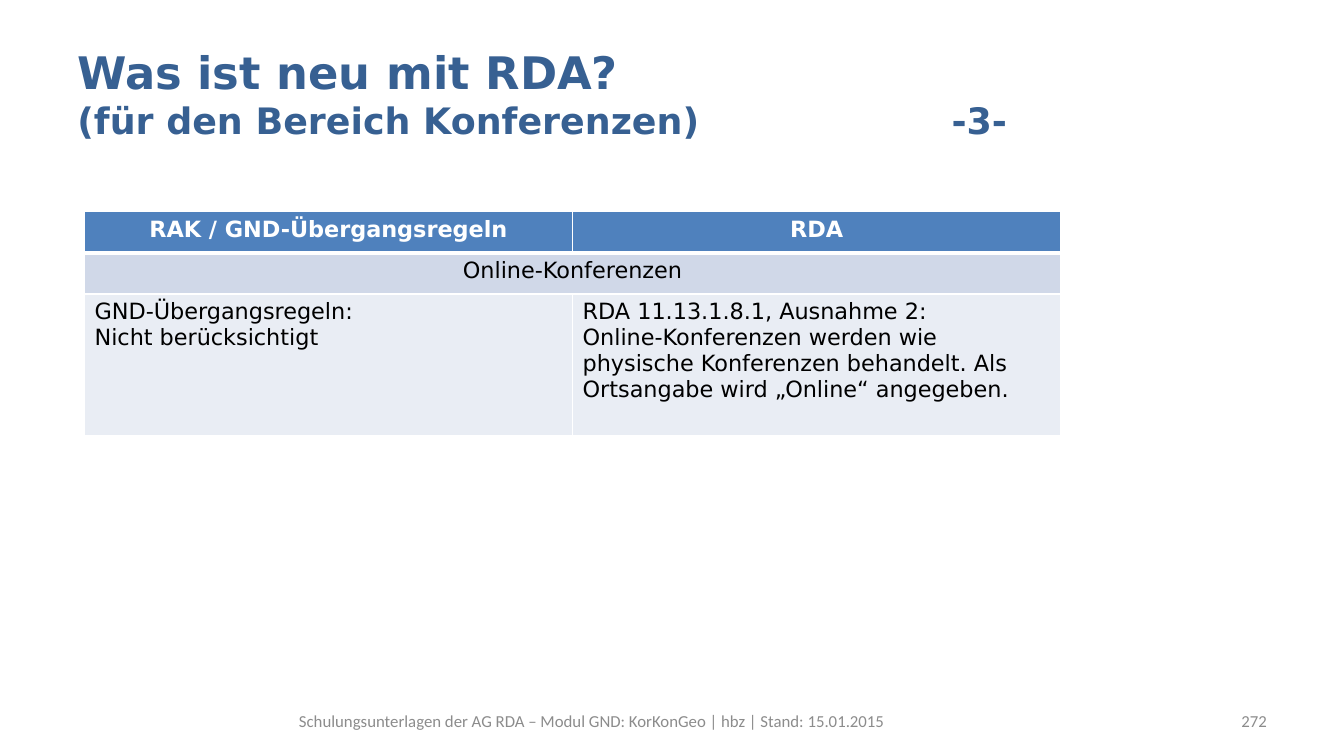
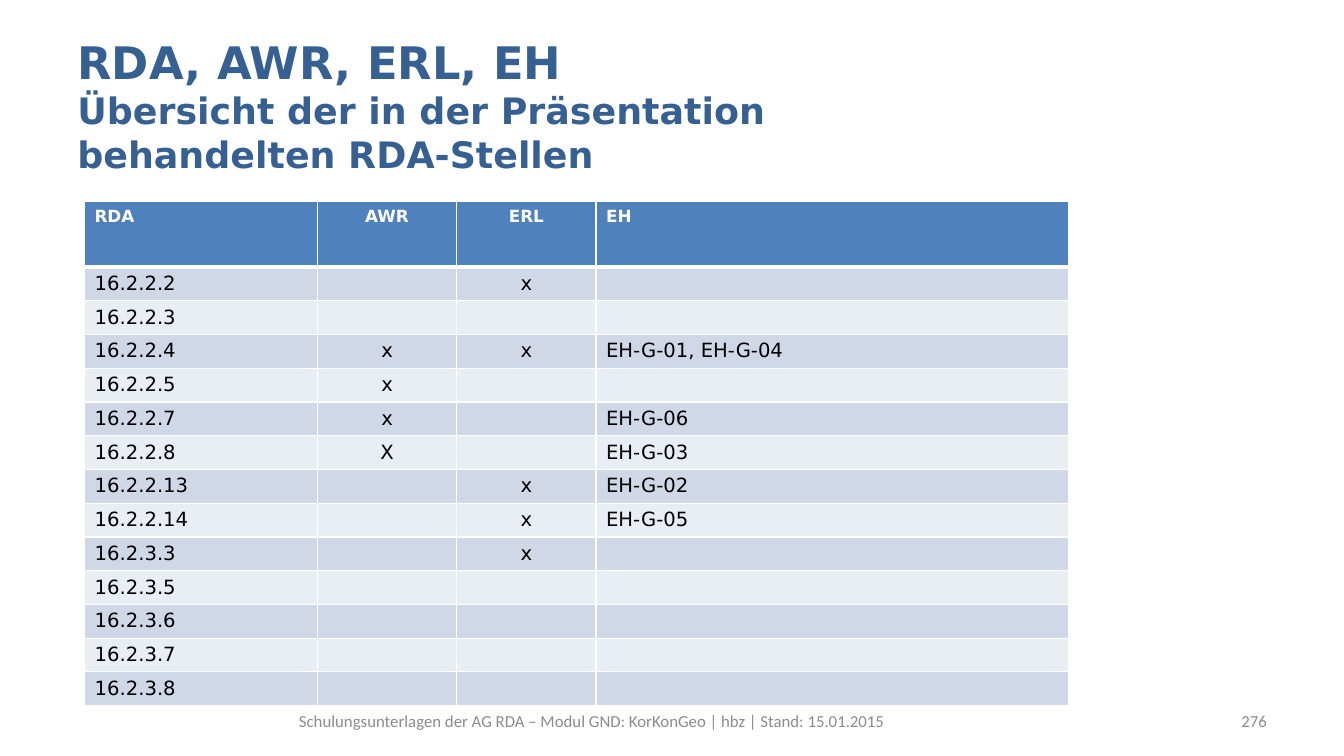
import lxml.etree
import pptx
import pptx.dml.color
import pptx.enum.text
import pptx.oxml.ns
import pptx.util
from dataclasses import dataclass

Cm = pptx.util.Cm
Pt = pptx.util.Pt
qn = pptx.oxml.ns.qn
ALIGN = pptx.enum.text.PP_ALIGN
LEFT, CENTER, RIGHT = ALIGN.LEFT, ALIGN.CENTER, ALIGN.RIGHT


@dataclass(frozen=True)
class Theme:
    heading_font: str = "DejaVu Sans"
    footer_font: str = "Calibri"
    title_color: str = "376092"
    footer_color: str = "8C8C8C"
    header_fill: str = "4F81BD"
    band_fills: tuple = ("D0D8E8", "E9EDF4")
    white: str = "FFFFFF"
    black: str = "000000"
    title_size: int = 32
    subtitle_size: int = 26
    footer_size: int = 12
    thin_line: int = 1
    thick_line: int = 3


THEME = Theme()
FOOTER = "Schulungsunterlagen der AG RDA – Modul GND: KorKonGeo | hbz | Stand: 15.01.2015"
TABLE_LEFT = 2.13

PAGES = [
    {
        "title": "Was ist neu mit RDA?\n(für den Bereich Konferenzen)\t-3-",
        "title_height": 3.18,
        "number": "272",
        "table_top": 5.33,
        "columns": [12.3, 12.3],
        "row_heights": [1.04, 1.04, 3.56],
        "header_size": 16,
        "body_size": 16,
        "header_aligns": [CENTER, CENTER],
        "body_aligns": [LEFT, LEFT],
        "rows": [
            ["RAK / GND-Übergangsregeln", "RDA"],
            ["Online-Konferenzen"],
            [
                "GND-Übergangsregeln:\nNicht berücksichtigt",
                "RDA 11.13.1.8.1, Ausnahme 2:\nOnline-Konferenzen werden wie physische "
                "Konferenzen behandelt. Als Ortsangabe wird „Online“ angegeben.",
            ],
        ],
    },
    {
        "title": "RDA, AWR, ERL, EH\nÜbersicht der in der Präsentation behandelten RDA-Stellen",
        "title_height": 3.76,
        "number": "276",
        "table_top": 5.08,
        "columns": [5.87, 3.51, 3.51, 11.91],
        "row_heights": [1.65] + [0.85] * 13,
        "header_size": 12,
        "body_size": 14,
        "header_aligns": [LEFT, CENTER, CENTER, LEFT],
        "body_aligns": [LEFT, CENTER, CENTER, LEFT],
        "rows": [
            ["RDA", "AWR", "ERL", "EH"],
            ["16.2.2.2", "", "x", ""],
            ["16.2.2.3", "", "", ""],
            ["16.2.2.4", "x", "x", "EH-G-01, EH-G-04"],
            ["16.2.2.5", "x", "", ""],
            ["16.2.2.7", "x", "", "EH-G-06"],
            ["16.2.2.8", "X", "", "EH-G-03"],
            ["16.2.2.13", "", "x", "EH-G-02"],
            ["16.2.2.14", "", "x", "EH-G-05"],
            ["16.2.3.3", "", "x", ""],
            ["16.2.3.5", "", "", ""],
            ["16.2.3.6", "", "", ""],
            ["16.2.3.7", "", "", ""],
            ["16.2.3.8", "", "", ""],
        ],
    },
]


def write(frame, text, *, size, color, font=THEME.heading_font, bold=False,
          align=LEFT, first_size=None, tab=None):
    """Fill a text frame, one paragraph per line; first_size sets the first line apart."""
    for index, line in enumerate(text.split("\n")):
        paragraph = frame.add_paragraph() if index else frame.paragraphs[0]
        paragraph.alignment = align
        line_size = first_size if first_size and index == 0 else size
        if "\t" in line:
            stops = lxml.etree.SubElement(paragraph._p.get_or_add_pPr(), qn("a:tabLst"))
            lxml.etree.SubElement(stops, qn("a:tab"), pos=str(tab), algn="l")
        if not line:
            # An empty cell would otherwise take the default size and stretch its row
            lxml.etree.SubElement(paragraph._p, qn("a:endParaRPr"), sz=str(line_size * 100))
            continue
        run = paragraph.add_run()
        run.text = line
        run.font.size = Pt(line_size)
        run.font.name = font
        run.font.bold = bold
        run.font.color.rgb = pptx.dml.color.RGBColor.from_string(color)


def add_text_box(slide, left, top, width, height, text, **text_format):
    frame = slide.shapes.add_textbox(Cm(left), Cm(top), Cm(width), Cm(height)).text_frame
    frame.word_wrap = True
    frame.vertical_anchor = pptx.enum.text.MSO_ANCHOR.MIDDLE
    write(frame, text, **text_format)


presentation = pptx.Presentation()
presentation.slide_width = Cm(33.87)
presentation.slide_height = Cm(19.05)
footer_format = {"size": THEME.footer_size, "color": THEME.footer_color,
                 "font": THEME.footer_font}

for page in PAGES:
    slide = presentation.slides.add_slide(presentation.slide_layouts[6])
    add_text_box(slide, 1.7, 0.76, 24.23, page["title_height"], page["title"],
                 size=THEME.subtitle_size, first_size=THEME.title_size,
                 color=THEME.title_color, bold=True, tab=Cm(22.03))
    add_text_box(slide, 1.7, 17.65, 26.44, 1.02, FOOTER, align=CENTER, **footer_format)
    add_text_box(slide, 29.46, 17.65, 2.72, 1.02, page["number"], align=RIGHT, **footer_format)

    columns, heights = page["columns"], page["row_heights"]
    table = slide.shapes.add_table(
        len(heights), len(columns), Cm(TABLE_LEFT), Cm(page["table_top"]),
        Cm(sum(columns)), Cm(sum(heights))).table
    for column, width in zip(table.columns, columns):
        column.width = Cm(width)

    for row_index, values in enumerate(page["rows"]):
        table.rows[row_index].height = Cm(heights[row_index])
        is_header = row_index == 0
        spans_row = len(values) == 1
        fill = THEME.header_fill if is_header else THEME.band_fills[(row_index - 1) % 2]
        aligns = page["header_aligns"] if is_header else page["body_aligns"]

        for column_index in range(len(columns)):
            cell = table.cell(row_index, column_index)
            properties = cell._tc.get_or_add_tcPr()
            for side in ("lnL", "lnR", "lnT", "lnB"):
                below_header = (row_index, side) in ((0, "lnB"), (1, "lnT"))
                weight = THEME.thick_line if below_header else THEME.thin_line
                border = lxml.etree.SubElement(properties, qn(f"a:{side}"), w=str(Pt(weight)))
                solid = lxml.etree.SubElement(border, qn("a:solidFill"))
                lxml.etree.SubElement(solid, qn("a:srgbClr"), val=THEME.white)
            cell.fill.solid()
            cell.fill.fore_color.rgb = pptx.dml.color.RGBColor.from_string(fill)
            if column_index < len(values):
                write(cell.text_frame, values[column_index],
                      size=page["header_size"] if is_header else page["body_size"],
                      color=THEME.white if is_header else THEME.black,
                      bold=is_header,
                      align=CENTER if spans_row else aligns[column_index])

        if spans_row:
            table.cell(row_index, 0).merge(table.cell(row_index, len(columns) - 1))

presentation.save("out.pptx")
